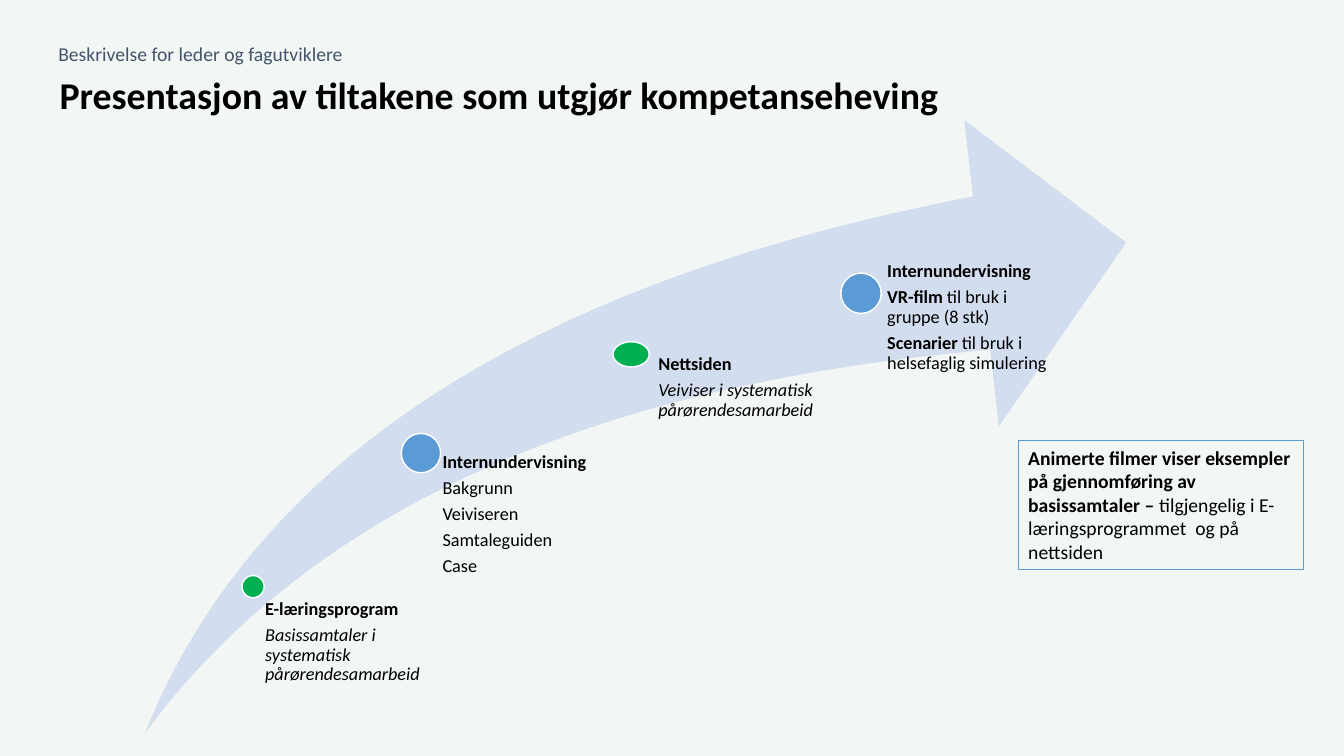
import pptx
import pptx.util
import pptx.dml.color
import pptx.enum.shapes
import pptx.enum.text

Inches, Pt = pptx.util.Inches, pptx.util.Pt
SHAPES = pptx.enum.shapes.MSO_SHAPE
ANCHOR = pptx.enum.text.MSO_ANCHOR
ALIGN = pptx.enum.text.PP_ALIGN
COLOURS = {"page": "F2F6F4", "text": "000000", "subtitle": "44546A", "swoosh": "D2DEEF",
           "green": "00B050", "blue": "5B9BD5", "white": "FFFFFF"}
BOLD, PLAIN, ITALIC = {"bold": True}, {"bold": False}, {"bold": False, "italic": True}
STEP_SPACING = {"line_spacing": 0.9, "space_after": Pt(4.5)}

# Each step: dot box, dot colour, text box, left inset, paragraphs of (text, format) spans.
STEPS = [
    ((0.96, 4.52, 0.22, 0.22), "green", (1.07, 4.76, 1.68, 1.2), 0.12, [
        [("E-læringsprogram", BOLD)],
        [("Basissamtaler i systematisk pårørendesamarbeid", ITALIC)]]),
    ((2.54, 3.11, 0.39, 0.39), "blue", (2.74, 3.3, 2.04, 2.78), 0.21, [
        [("Internundervisning", BOLD)],
        [("Bakgrunn", PLAIN)],
        [("Veiviseren", PLAIN)],
        [("Samtaleguiden", PLAIN)],
        [("Case", PLAIN)]]),
    ((4.64, 2.2, 0.36, 0.25), "green", (4.82, 2.33, 2.04, 3.76), 0.27, [
        [("Nettsiden", BOLD)],
        [("Veiviser i systematisk pårørendesamarbeid", ITALIC)]]),
    ((6.9, 1.52, 0.4, 0.4), "blue", (6.99, 1.41, 2.04, 4.36), 0.37, [
        [("Internundervisning", BOLD)],
        [("VR-film", BOLD), (" til bruk i gruppe (8 stk)", PLAIN)],
        [("Scenarier", BOLD), (" til bruk i helsefaglig simulering", PLAIN)]]),
]
NOTE = [[("Animerte filmer viser eksempler på gjennomføring av basissamtaler – ", BOLD),
         ("tilgjengelig i E-læringsprogrammet  og på nettsiden", PLAIN)]]


def colour(name):
    """Return the named colour."""
    return pptx.dml.color.RGBColor.from_string(COLOURS[name])


def apply(target, values):
    """Set each attribute from a dict of values."""
    for name, value in values.items():
        setattr(target, name, value)


def write(frame, paragraphs, size, spacing, ink="text", **frame_values):
    """Fill a text frame with left-aligned paragraphs of formatted spans."""
    apply(frame, {"word_wrap": True, **frame_values})
    for index, spans in enumerate(paragraphs):
        para = frame.add_paragraph() if index else frame.paragraphs[0]
        apply(para, {"alignment": ALIGN.LEFT, **spacing})
        for text, values in spans:
            span = para.add_run()
            span.text = text
            apply(span.font, {"name": "Calibri", "size": Pt(size), **values})
            span.font.color.rgb = colour(ink)


def add_shape(page, kind, box, fill=None, line=None, width=1):
    """Add a preset shape without shadow, with optional fill and line."""
    shape = page.shapes.add_shape(kind, *map(Inches, box))
    shape.shadow.inherit = False
    for part, name in ((shape.fill, fill), (shape.line.fill, line)):
        if name:
            part.solid()
            part.fore_color.rgb = colour(name)
        else:
            part.background()
    if line:
        shape.line.width = Pt(width)
    return shape


def add_heading(page, box):
    """Place the subtitle line above the title."""
    left, top, width, height = box
    title = page.shapes.title
    apply(title, {"left": Inches(left + 0.01), "top": Inches(top + 0.29),
                  "width": Inches(width - 0.01), "height": Inches(height - 0.29)})
    write(title.text_frame, [[("Presentasjon av tiltakene som utgjør kompetanseheving", BOLD)]],
          27, {"line_spacing": 0.9}, vertical_anchor=ANCHOR.MIDDLE)
    subtitle = page.shapes.add_textbox(*map(Inches, (left, top, 7.15, 0.28)))
    write(subtitle.text_frame, [[("Beskrivelse for leder og fagutviklere", PLAIN)]],
          14, {"line_spacing": 0.7, "space_before": Pt(10)}, "subtitle")


def add_journey(page, box):
    """Draw the rising arrow with its dots and step texts."""
    left, top = box[:2]
    swoosh = add_shape(page, SHAPES.SWOOSH_ARROW, box, "swoosh")
    swoosh.adjustments[0] = swoosh.adjustments[1] = 0.25
    for dot, dot_colour, label, inset, paragraphs in STEPS:
        dot_box, label_box = [(left + x, top + y, w, h) for x, y, w, h in (dot, label)]
        add_shape(page, SHAPES.OVAL, dot_box, dot_colour, "white")
        text = page.shapes.add_textbox(*map(Inches, label_box))
        write(text.text_frame, paragraphs, 13, STEP_SPACING, margin_left=Inches(inset),
              margin_top=0, margin_right=0, margin_bottom=0)


def add_note(page, box):
    """Add the outlined note on the animated films."""
    note = add_shape(page, SHAPES.RECTANGLE, box, line="blue", width=0.75)
    write(note.text_frame, NOTE, 14, {}, vertical_anchor=ANCHOR.TOP)


def main():
    """Build and save the deck."""
    deck = pptx.Presentation()
    apply(deck, {"slide_width": Inches(13.33), "slide_height": Inches(7.5)})
    page = deck.slides.add_slide(deck.slide_layouts[5])
    page.background.fill.solid()
    page.background.fill.fore_color.rgb = colour("page")
    add_heading(page, (0.48, 0.43, 12.44, 0.77))
    add_journey(page, (1.44, 1.19, 9.73, 6.08))
    add_note(page, (10.1, 4.37, 2.83, 1.28))
    deck.save("out.pptx")


if __name__ == "__main__":
    main()
